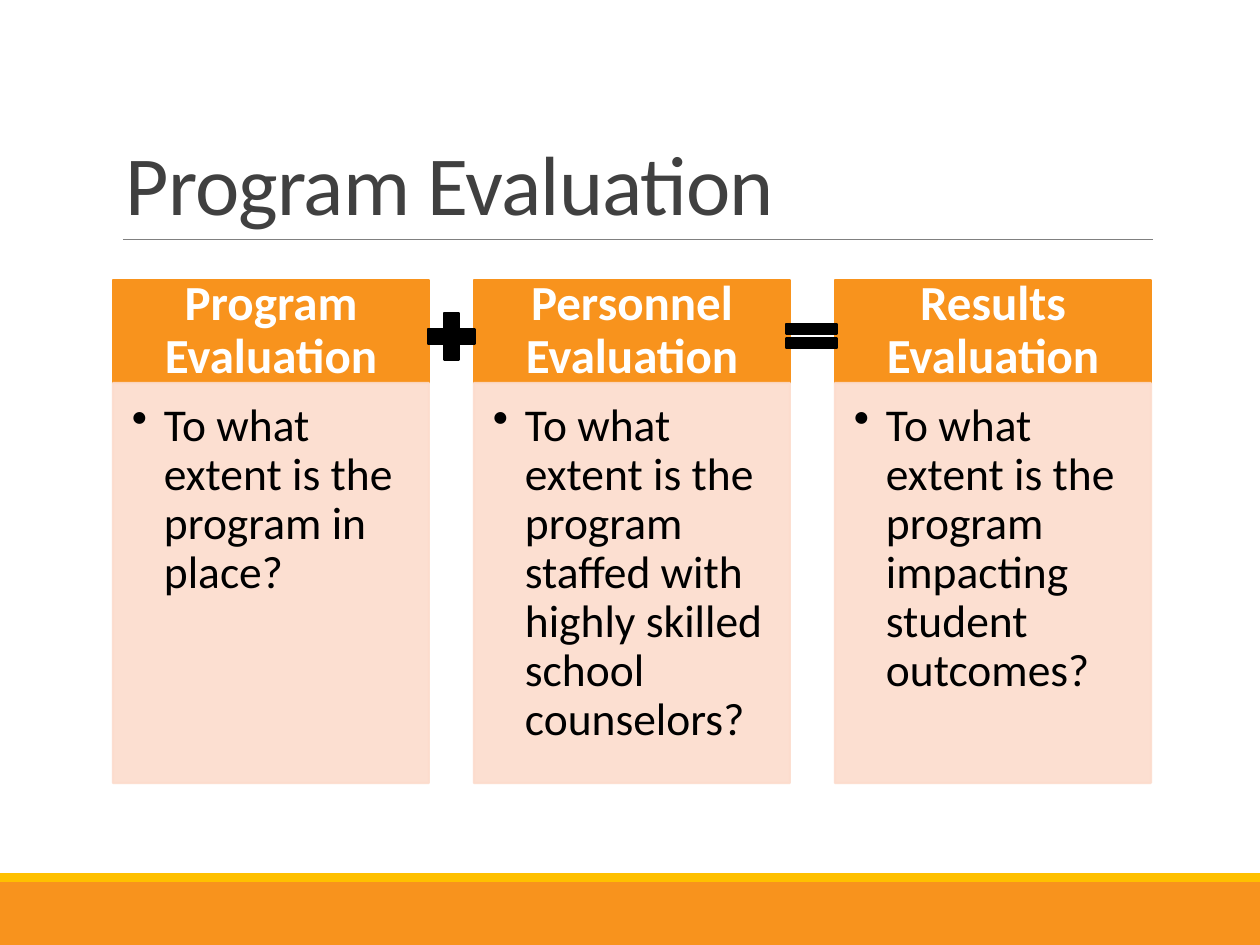
import pptx
import pptx.util
import pptx.dml.color
import pptx.enum.shapes
import pptx.enum.text
import pptx.oxml.ns
import lxml.etree

RGB = pptx.dml.color.RGBColor
SHAPE = pptx.enum.shapes.MSO_SHAPE
ALIGN = pptx.enum.text.PP_ALIGN
ANCHOR = pptx.enum.text.MSO_ANCHOR
qn = pptx.oxml.ns.qn

# Content
TITLE = "Program Evaluation"
COLUMNS = [
    ("Program Evaluation", "To what extent is the program in place?"),
    ("Personnel Evaluation",
     "To what extent is the program staffed with highly skilled school counselors?"),
    ("Results Evaluation",
     "To what extent is the program impacting student outcomes?"),
]

# Colours and font
ORANGE = RGB(0xF8, 0x93, 0x1D)
GOLD = RGB(0xFF, 0xC0, 0x00)
PEACH = RGB(0xFC, 0xDC, 0xCD)
GREY = RGB(0x80, 0x80, 0x80)
CHARCOAL = RGB(0x40, 0x40, 0x40)
WHITE = RGB(0xFF, 0xFF, 0xFF)
BLACK = RGB(0, 0, 0)
FONT = "Calibri"

# Layout in px, 126 to the inch
PX_PER_INCH = 126
SLIDE_W, SLIDE_H = 1260, 945
LEFT, COLUMN_W, PITCH = 113, 316, 361
HEADER_TOP, HEADER_H, BODY_H = 280, 103, 400
BODY_TOP = HEADER_TOP + HEADER_H
FOOTER_H, STRIPE_H = 63, 9


def px(n):
    return round(n * pptx.util.Inches(1) / PX_PER_INCH)


def add_block(kind, x, y, w, h, color, outlined=True, alpha=None):
    block = slide.shapes.add_shape(kind, px(x), px(y), px(w), px(h))
    block.shadow.inherit = False
    block.fill.solid()
    block.fill.fore_color.rgb = color
    if outlined:
        block.line.color.rgb = color
        block.line.width = pptx.util.Pt(1.25)
    else:
        block.line.fill.background()
    if alpha:
        for clr in block._element.spPr.iter(qn("a:srgbClr")):
            lxml.etree.SubElement(clr, qn("a:alpha"), val=str(alpha * 1000))
    return block


def write(target, text, size, color, bold=False, align=ALIGN.LEFT,
          anchor=ANCHOR.TOP, spacing=0.9, insets=None, bullet_indent=None,
          tracking=None):
    frame = target.text_frame
    frame.word_wrap = True
    frame.auto_size = pptx.enum.text.MSO_AUTO_SIZE.NONE
    frame.vertical_anchor = anchor
    if insets:
        (frame.margin_left, frame.margin_top,
         frame.margin_right, frame.margin_bottom) = map(px, insets)
    paragraph = frame.paragraphs[0]
    paragraph.alignment = align
    paragraph.line_spacing = spacing
    run = paragraph.add_run()
    run.text = text
    run.font.name = FONT
    run.font.size = pptx.util.Pt(size)
    run.font.bold = bold
    run.font.color.rgb = color
    if tracking:
        run._r.get_or_add_rPr().set("spc", str(tracking))
    if bullet_indent:
        props = paragraph._p.get_or_add_pPr()
        props.set("marL", str(px(bullet_indent)))
        props.set("indent", str(-px(bullet_indent)))
        lxml.etree.SubElement(props, qn("a:buChar"), char="•")


deck = pptx.Presentation()
deck.slide_width, deck.slide_height = px(SLIDE_W), px(SLIDE_H)
slide = deck.slides.add_slide(deck.slide_layouts[5])

# Footer bands
footer_top = SLIDE_H - FOOTER_H
add_block(SHAPE.RECTANGLE, 0, footer_top, SLIDE_W, FOOTER_H, ORANGE, outlined=False)
add_block(SHAPE.RECTANGLE, 0, footer_top - STRIPE_H, SLIDE_W, STRIPE_H, GOLD,
          outlined=False)

# Title and the rule under it
title = slide.shapes.title
title.left, title.top, title.width, title.height = map(px, (LEFT, 39, 1040, 200))
write(title, TITLE, 48, CHARCOAL, anchor=ANCHOR.BOTTOM, spacing=0.85, tracking=-50)
rule = slide.shapes.add_connector(pptx.enum.shapes.MSO_CONNECTOR.STRAIGHT,
                                  px(123), px(239), px(1153), px(239))
rule.line.color.rgb = GREY
rule.line.width = pptx.util.Pt(0.5)
lxml.etree.SubElement(rule._element.spPr, qn("a:effectLst"))

# Columns: a header above a question
for i, (heading, question) in enumerate(COLUMNS):
    x = LEFT + i * PITCH
    header = add_block(SHAPE.RECTANGLE, x, HEADER_TOP, COLUMN_W, HEADER_H, ORANGE)
    write(header, heading, 28, WHITE, bold=True, align=ALIGN.CENTER,
          anchor=ANCHOR.MIDDLE, insets=(28, 15, 28, 15))
    body = add_block(SHAPE.RECTANGLE, x, BODY_TOP, COLUMN_W, BODY_H, PEACH, alpha=90)
    write(body, question, 26, BLACK, insets=(19, 19, 25, 29), bullet_indent=32)

# Operators between the headers
add_block(SHAPE.MATH_EQUAL, 777, 315, 69, 42, BLACK)
add_block(SHAPE.MATH_PLUS, 420, 305, 63, 63, BLACK)

deck.save("out.pptx")
